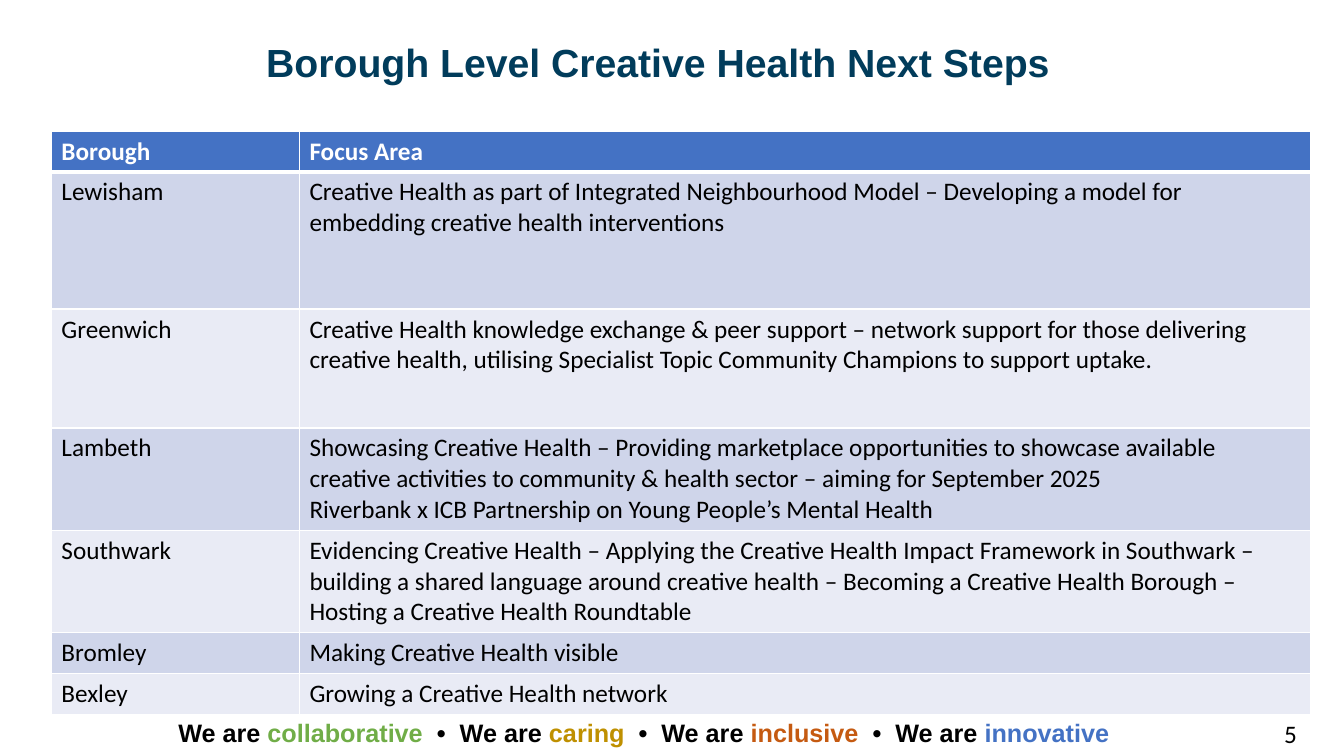
"""Build the borough next-steps slide: title, focus-area table and values footer."""
from dataclasses import dataclass

from lxml.etree import SubElement
from pptx import Presentation
from pptx.dml.color import RGBColor as RGB
from pptx.enum.text import MSO_ANCHOR as Anchor, PP_ALIGN as Align
from pptx.oxml.ns import qn
from pptx.util import Inches as In, Pt


@dataclass(frozen=True)
class Theme:
    heading: str = "Arial"
    body: str = "Calibri"
    title_size: int = 28
    text_size: int = 18
    navy: str = "013C5B"
    black: str = "000000"
    white: str = "FFFFFF"
    blue: str = "4472C4"
    green: str = "70AD47"
    gold: str = "BF9000"
    orange: str = "C55A11"
    bands: tuple = ("E9EBF5", "CFD5EA")


def add_run(p, text, font, size, color, bold=False):
    r = p.add_run()
    r.text = text
    r.font.name, r.font.size, r.font.bold = font, Pt(size), bold
    r.font.color.rgb = RGB.from_string(color)


def add_border(cell, side, width, color):
    ln = SubElement(cell._tc.get_or_add_tcPr(), qn(f"a:{side}"), w=str(Pt(width)))
    SubElement(SubElement(ln, qn("a:solidFill")), qn("a:srgbClr"), val=color)


theme = Theme()
prs = Presentation()
prs.slide_width, prs.slide_height = In(13.33), In(7.5)
s = prs.slides.add_slide(prs.slide_layouts[5])

title = s.shapes.title
title.left, title.top, title.width, title.height = In(2.41), In(0.28), In(8.23), In(0.72)
tf = title.text_frame
tf.vertical_anchor = Anchor.MIDDLE
p = tf.paragraphs[0]
p.alignment, p.line_spacing = Align.CENTER, 0.9
add_run(p, "Borough Level Creative Health Next Steps", theme.heading, theme.title_size, theme.navy, True)

rows = [
    (0.39, "Borough", ["Focus Area"]),
    (1.36, "Lewisham", ["Creative Health as part of Integrated Neighbourhood Model – Developing a model for "
                        "embedding creative health interventions"]),
    (1.18, "Greenwich", ["Creative Health knowledge exchange & peer support – network support for those delivering "
                         "creative health, utilising Specialist Topic Community Champions to support uptake."]),
    (0.99, "Lambeth", ["Showcasing Creative Health – Providing marketplace opportunities to showcase available "
                       "creative activities to community & health sector – aiming for September 2025",
                       "Riverbank x ICB Partnership on Young People’s Mental Health"]),
    (0.99, "Southwark", ["Evidencing Creative Health – Applying the Creative Health Impact Framework in Southwark – "
                         "building a shared language around creative health – Becoming a Creative Health Borough – "
                         "Hosting a Creative Health Roundtable"]),
    (0.39, "Bromley", ["Making Creative Health visible"]),
    (0.39, "Bexley", ["Growing a Creative Health network"]),
]
height = sum(row[0] for row in rows)
table = s.shapes.add_table(len(rows), 2, In(0.51), In(1.3), In(12.49), In(height)).table
table.columns[0].width, table.columns[1].width = In(2.46), In(10.03)

for i, (row_height, borough, focus) in enumerate(rows):
    table.rows[i].height = In(row_height)
    header = i == 0
    for j, lines in enumerate(([borough], focus)):
        cell = table.cell(i, j)
        edges = {"lnL": 1, "lnR": 1, "lnT": 3 if i == 1 else 1, "lnB": 3 if header else 1}
        for side, width in edges.items():
            add_border(cell, side, width, theme.white)
        cell.fill.solid()
        cell.fill.fore_color.rgb = RGB.from_string(theme.blue if header else theme.bands[i % 2])
        tf = cell.text_frame
        for k, line in enumerate(lines):
            p = tf.add_paragraph() if k else tf.paragraphs[0]
            add_run(p, line, theme.body, theme.text_size, theme.white if header else theme.black, header)

values = [("collaborative", theme.green), ("caring", theme.gold),
          ("inclusive", theme.orange), ("innovative", theme.blue)]
tf = s.shapes.add_textbox(In(1.67), In(7.07), In(10), In(0.4)).text_frame
tf.word_wrap = True
p = tf.paragraphs[0]
for i, (value, color) in enumerate(values):
    lead = "  •  We are " if i else "We are "
    add_run(p, lead, theme.heading, theme.text_size, theme.black, True)
    add_run(p, value, theme.heading, theme.text_size, color, True)

tf = s.shapes.add_textbox(In(11.11), In(7.08), In(1.85), In(0.4)).text_frame
tf.word_wrap = True
p = tf.paragraphs[0]
p.alignment = Align.RIGHT
add_run(p, "5", theme.body, theme.text_size, theme.black)

prs.save("out.pptx")
